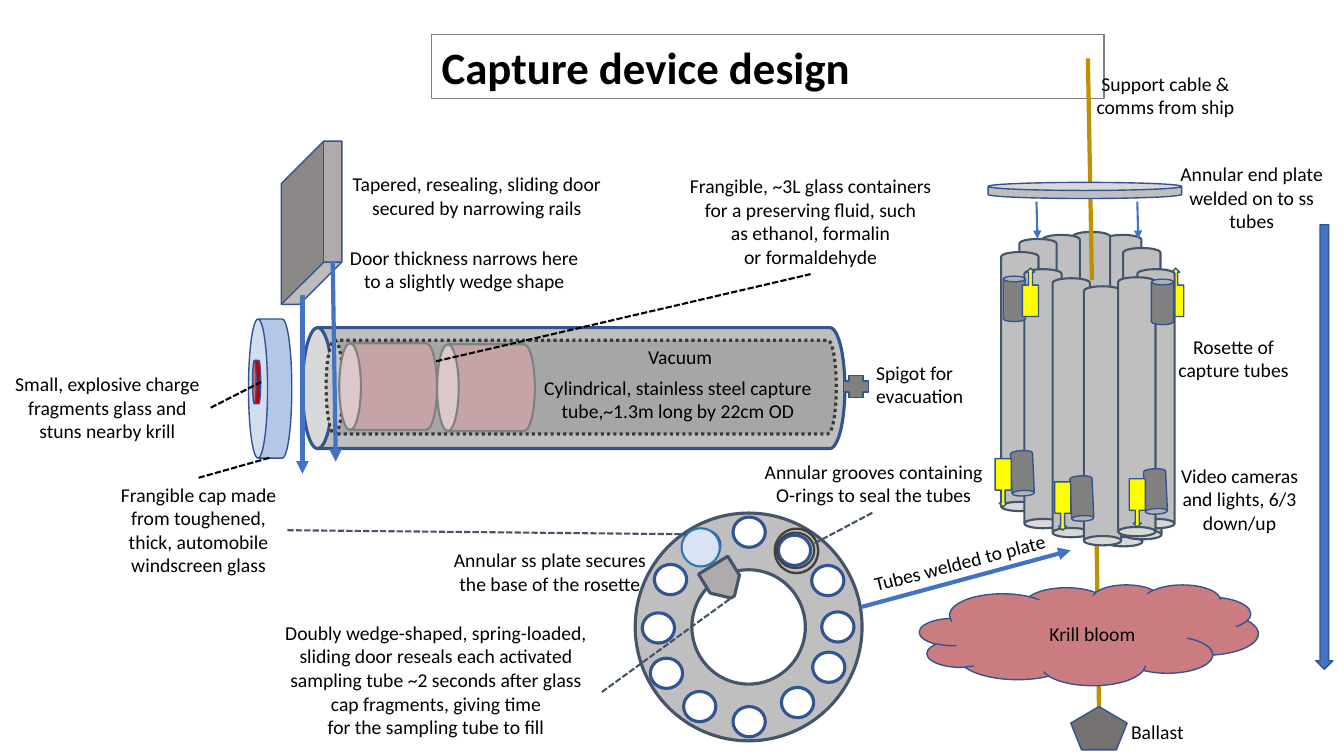
from dataclasses import dataclass
from typing import Any

from lxml.etree import SubElement
from pptx import Presentation
from pptx.dml.color import RGBColor
from pptx.enum.dml import MSO_LINE_DASH_STYLE as Dash
from pptx.enum.shapes import MSO_CONNECTOR as Connector, MSO_SHAPE as Shape
from pptx.enum.text import MSO_ANCHOR as Anchor, MSO_AUTO_SIZE as AutoSize, PP_ALIGN as Align
from pptx.oxml.ns import qn
from pptx.util import Pt

PX = 9144
FONT = "Calibri"
COLORS = {
    "black": "000000", "white": "FFFFFF", "outline": "325491", "slate": "44546A",
    "blue": "4472C4", "steel": "BFBFBF", "inner": "A6A6A6", "dots": "3B3838",
    "door": "AFABAB", "cap": "B4C7E7", "charge": "C00000", "glass": "C5A4A8",
    "gray": "808080", "cable": "BF9000", "light": "FFFF00", "krill": "CA7C80",
    "ballast": "767171", "disc": "DAE3F3", "disc_edge": "2E75B6", "ring": "404040",
}
TOP, BOTTOM, RIGHT = 0, 2, 3


def color(name):
    """Return the named colour."""
    return RGBColor.from_string(COLORS[name])


def style_line(line, name, width, dash=None):
    """Set the colour, width and dash of a line."""
    line.color.rgb = color(name)
    line.width = Pt(width)
    if dash:
        line.dash_style = dash


def style_text(text_frame, size, align, bold=False):
    """Format every run and paragraph of a text frame."""
    for paragraph in text_frame.paragraphs:
        paragraph.alignment = align
        for run in paragraph.runs:
            run.font.name = FONT
            run.font.size = Pt(size)
            run.font.bold = bold
            run.font.color.rgb = color("black")


@dataclass
class Region:
    """A part of the slide whose objects are placed from its left top corner."""

    slide: Any
    left: int
    top: int

    def place(self, x, y):
        """Turn a point of the region into slide units."""
        return (self.left + x) * PX, (self.top + y) * PX

    def shape(self, kind, box, fill, edge="outline", width=1, rotation=0, adjust=(), dash=None):
        """Add a filled and outlined preset shape."""
        x, y, wide, high = box
        shape = self.slide.shapes.add_shape(kind, *self.place(x, y), wide * PX, high * PX)
        shape.shadow.inherit = False
        shape.rotation = rotation
        for index, value in enumerate(adjust):
            shape.adjustments[index] = value
        shape.fill.solid()
        shape.fill.fore_color.rgb = color(fill)
        style_line(shape.line, edge, width, dash)
        return shape

    def line(self, start, end, name="black", width=1.5, dash=None, arrow=False):
        """Add a straight line, with an arrowhead at its end if asked for."""
        connector = self.slide.shapes.add_connector(
            Connector.STRAIGHT, *self.place(*start), *self.place(*end))
        style_line(connector.line, name, width, dash)
        if arrow:
            SubElement(connector.line._get_or_add_ln(), qn("a:tailEnd"), type="triangle")
        SubElement(connector._element.spPr, qn("a:effectLst"))
        return connector

    def label(self, text, box, align=Align.CENTER, wrap=False, rotation=0):
        """Add a text label, one paragraph for each line of the text."""
        x, y, wide, high = box
        label = self.slide.shapes.add_textbox(*self.place(x, y), wide * PX, high * PX)
        label.rotation = rotation
        label.text_frame.text = text
        label.text_frame.word_wrap = wrap
        label.text_frame.auto_size = AutoSize.SHAPE_TO_FIT_TEXT
        style_text(label.text_frame, 14, align)
        return label


def draw_title(slide, left, top, wide, high):
    """Place the framed slide title."""
    title = slide.shapes.title
    title.left, title.top, title.width, title.height = (n * PX for n in (left, top, wide, high))
    title.text_frame.text = "Capture device design"
    title.text_frame.vertical_anchor = Anchor.TOP
    title.text_frame.auto_size = AutoSize.NONE
    style_text(title.text_frame, 32, Align.LEFT, bold=True)
    style_line(title.line, "gray", 0.75)


def draw_capture_tube(slide, left, top):
    """Draw the capture tube with its cap and door, and return the cap label."""
    region = Region(slide, left, top)
    region.shape(Shape.CAN, (509, 16, 120, 538), "steel", width=2.25, rotation=270)
    region.shape(Shape.CAN, (199, 264, 138, 43), "cap", rotation=270, adjust=[0.44])
    region.shape(Shape.CAN, (530, 31, 93, 506), "inner", "dots", 2.25, 270, [0.18], Dash.ROUND_DOT)
    region.shape(Shape.CAN, (233, 275, 43, 8), "charge", rotation=270, adjust=[0.44])
    region.shape(Shape.CUBE, (279, 40, 60, 162), "door", rotation=180, adjust=[0.7])
    cap = region.label("Frangible cap made\nfrom toughened,\nthick, automobile\nwindscreen glass",
                       (109, 374, 176, 104))
    charge = region.label("Small, explosive charge\nfragments glass and\nstuns nearby krill",
                          (4, 264, 205, 81))
    region.label("Tapered, resealing, sliding door\nsecured by narrowing rails", (339, 66, 268, 57))
    region.label("Door thickness narrows here\nto a slightly wedge shape", (336, 139, 249, 57))
    region.line((300, 193), (300, 370), "blue", 3, arrow=True)
    region.line((330, 160), (333, 358), "blue", 3, arrow=True)
    region.line((208, 304), (259, 279), dash=Dash.SQUARE_DOT).begin_connect(charge, RIGHT)
    region.line((197, 374), (268, 354), dash=Dash.SQUARE_DOT).begin_connect(cap, TOP)

    region.shape(Shape.CAN, (439, 236, 86, 97), "glass", "gray", 1.5, 270)
    glass = region.label("Frangible, ~3L glass containers\nfor a preserving fluid, such\n"
                         "as ethanol, formalin\nor formaldehyde", (673, 68, 262, 104))
    region.line((400, 266), (804, 173), dash=Dash.SQUARE_DOT).end_connect(glass, BOTTOM)
    region.shape(Shape.CAN, (342, 235, 86, 97), "glass", "gray", 1.5, 270)

    region.label("Vacuum", (633, 237, 84, 34), Align.LEFT)
    region.label("Cylindrical, stainless steel capture\ntube,~1.3m long by 22cm OD",
                 (526, 268, 293, 57))
    region.shape(Shape.CROSS, (838, 271, 22, 25), "gray", rotation=90)
    region.label("Spigot for\nevacuation", (859, 253, 108, 57), Align.LEFT)
    return cap


def draw_rosette(slide, left, top):
    """Draw the rosette of tubes on its cable, with cameras and lights."""
    region = Region(slide, left, top)

    def light(x, y, rotation=0):
        """Add one light pointing down, or up when turned round."""
        region.shape(Shape.DOWN_ARROW_CALLOUT, (x, y, 16, 48), "light", rotation=rotation)

    def camera(x, y, rotation=0):
        """Add one video camera."""
        region.shape(Shape.CAN, (x, y, 22, 45), "gray", rotation=rotation)

    light(258, 266, 180)
    region.line((187, 486), (190, 706), "cable", 3)
    for x, y in [(196, 285), (215, 278), (195, 233), (214, 246), (164, 230), (134, 233), (111, 237),
                 (93, 250), (116, 267), (144, 276), (175, 284), (228, 267), (209, 275)]:
        region.shape(Shape.CAN, (x, y, 37, 257), "steel", "slate", 1.5, 180)
    region.line((179, 58), (183, 278), "cable", 3)
    region.shape(Shape.CAN, (80, 181, 192, 16), "steel", adjust=[0.5])
    for x in (128, 228):
        region.line((x, 200), (x + 1, 237), "blue", arrow=True)
    for x, y in [(103, 447), (162, 472), (235, 465)]:
        camera(x, y, 177.4)
    for x, y in [(95, 274), (242, 277)]:
        camera(x, y)
    for x, y in [(87, 455), (146, 478), (220, 475)]:
        light(x, y)
    light(114, 266, 180)
    region.label("Support cable &\ncomms from ship", (176, 66, 160, 57))
    region.label("Annular end plate\nwelded on to ss\ntubes", (260, 156, 163, 81))
    region.label("Rosette of\ncapture tubes", (257, 327, 133, 57))
    region.label("Video cameras\nand lights, 6/3\ndown/up", (261, 455, 137, 81))
    region.shape(Shape.DOWN_ARROW, (405, 223, 17, 441), "blue")


def draw_krill_bloom(slide, left, top):
    """Draw the krill bloom and the ballast below it."""
    region = Region(slide, left, top)
    region.shape(Shape.CLOUD, (12, 80, 336, 100), "krill")
    region.label("Krill bloom", (131, 112, 106, 34), Align.LEFT)
    region.shape(Shape.REGULAR_PENTAGON, (162, 201, 56, 43), "ballast")
    region.label("Ballast", (212, 209, 73, 34), Align.LEFT)


def draw_base_plate(slide, left, top, cap):
    """Draw the annular base plate, its tube holes and its labels."""
    region = Region(slide, left, top)
    region.shape(Shape.DONUT, (430, 109, 225, 226), "steel", "slate", 2.25)
    for x, y in [(478, 286), (445, 253), (449, 160), (482, 126), (575, 282), (606, 247),
                 (605, 161), (572, 131), (437, 208), (615, 207), (527, 301), (527, 113)]:
        region.shape(Shape.OVAL, (x, y, 32, 30), "white", width=2.25)
    region.shape(Shape.SNIP_2_SAME_RECTANGLE, (500, 158, 34, 37), "door", "slate", 2.25, 148.4,
                 [0.44, 0])
    region.shape(Shape.OVAL, (476, 124, 38, 38), "disc", "disc_edge", 1.5)
    door = region.label("Doubly wedge-shaped, spring-loaded,\nsliding door reseals each activated\n"
                        "sampling tube ~2 seconds after glass cap fragments, giving time\n"
                        "for the sampling tube to fill", (68, 211, 329, 151), wrap=True)
    region.line((655, 202), (862, 146), "blue", 3, arrow=True)
    region.label("Annular ss plate secures\nthe base of the rosette", (239, 139, 213, 57))
    region.label("Tubes welded to plate", (655, 141, 196, 34), Align.LEFT, rotation=345.5)
    region.line((398, 287), (527, 192), "slate", dash=Dash.SQUARE_DOT).begin_connect(door, RIGHT)
    region.line((85, 126), (481, 130), "slate", dash=Dash.SQUARE_DOT).begin_connect(cap, RIGHT)
    for box in [(568, 124, 44, 45), (570, 128, 38, 36)]:
        region.shape(Shape.DONUT, box, "blue", "ring", adjust=[0.02])
    grooves = region.label("Annular grooves containing\nO-rings to seal the tubes",
                           (547, 51, 239, 57))
    region.line((608, 139), (666, 108), "slate", dash=Dash.SQUARE_DOT).end_connect(grooves, BOTTOM)


def main():
    """Build the slide and save it."""
    presentation = Presentation()
    presentation.slide_width, presentation.slide_height = 1333 * PX, 750 * PX
    slide = presentation.slides.add_slide(presentation.slide_layouts[5])
    draw_title(slide, 428, 34, 667, 64)
    cap = draw_capture_tube(slide, 0, 100)
    draw_rosette(slide, 900, 0)
    draw_krill_bloom(slide, 900, 500)
    draw_base_plate(slide, 200, 400, cap)
    presentation.save("out.pptx")


if __name__ == "__main__":
    main()
